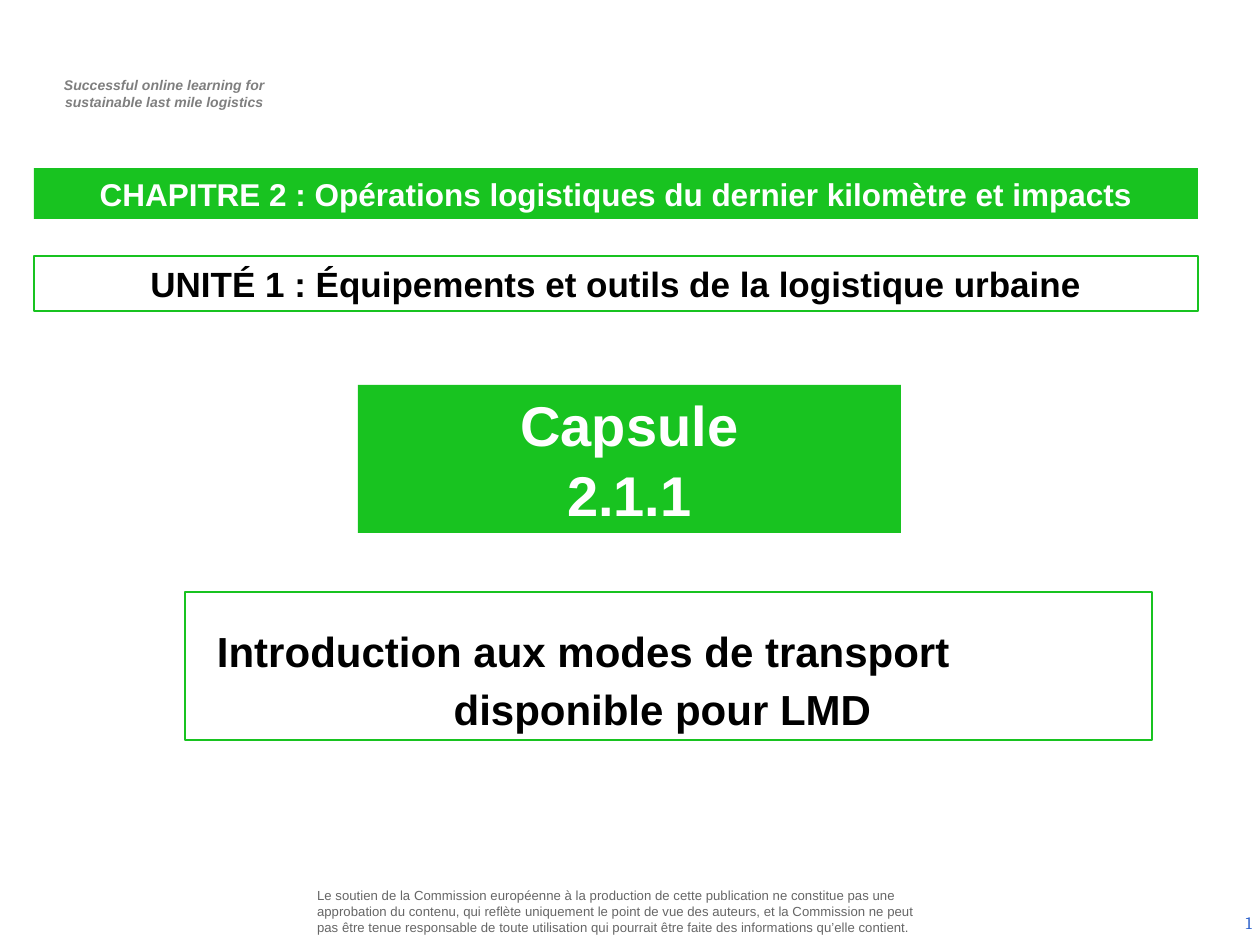
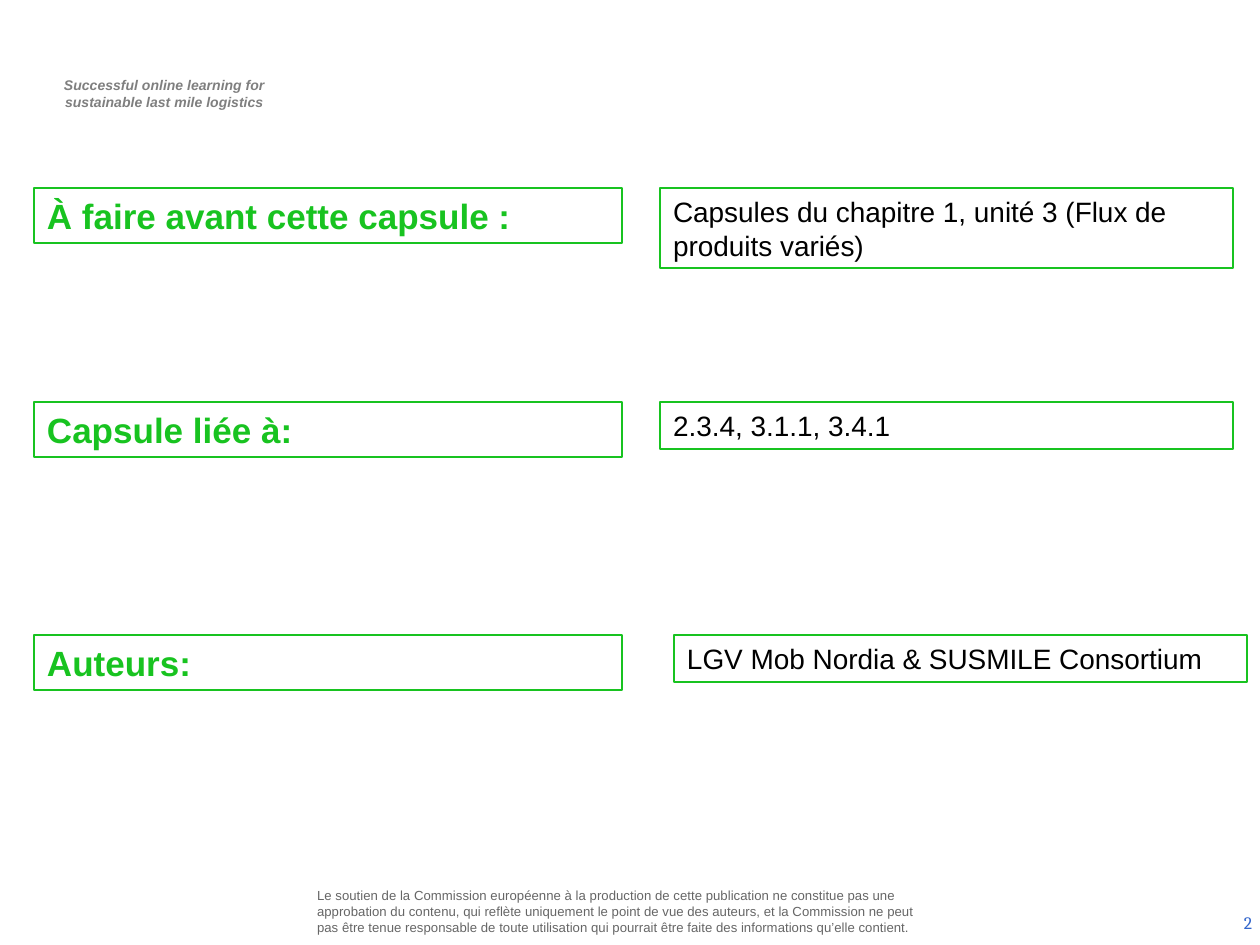
"""Build the opening and prerequisites slides of capsule 2.1.1."""
import dataclasses

import pptx
import pptx.dml.color
import pptx.enum.shapes
import pptx.enum.text
import pptx.oxml.ns
import pptx.util

PX = 914400 / 126
ALIGN = pptx.enum.text.PP_ALIGN
ANCHOR = pptx.enum.text.MSO_ANCHOR


@dataclasses.dataclass(frozen=True)
class Theme:
    green: str = "18C320"
    white: str = "FFFFFF"
    black: str = "000000"
    motto: str = "7F7F7F"
    notice: str = "666666"
    number: str = "3366CC"
    font: str = "Arial"
    number_font: str = "Cambria"
    capsule_size: float = 32
    topic_size: float = 24
    heading_size: float = 20
    chapter_size: float = 18
    answer_size: float = 16
    number_size: float = 10
    motto_size: float = 8
    notice_size: float = 7.5


T = Theme()


def write(sp, text, size, color=T.black, font=T.font, bold=False, italic=False,
          align=ALIGN.LEFT, anchor=ANCHOR.MIDDLE, inset=(13, 6, 13, 6), gap=0):
    """Fill a shape with one paragraph per line of text."""
    tf = sp.text_frame
    tf.word_wrap = True
    tf.auto_size = pptx.enum.text.MSO_AUTO_SIZE.NONE
    tf.vertical_anchor = anchor
    tf.margin_left, tf.margin_top, tf.margin_right, tf.margin_bottom = [round(v * PX) for v in inset]
    for i, line in enumerate(text.split("\n")):
        p = tf.add_paragraph() if i else tf.paragraphs[0]
        p.alignment = align
        p.line_spacing = 1.0
        p.space_before = round(gap * PX) if i else 0
        r = p.add_run()
        r.text = line
        r.font.name = font
        r.font.size = pptx.util.Pt(size)
        r.font.bold = bold
        r.font.italic = italic
        r.font.color.rgb = pptx.dml.color.RGBColor.from_string(color)
    return tf


def box(s, at, fill=None, line=None, width=0.75, title=False):
    """Place a rectangle, or the slide title, with the given fill and line."""
    left, top, w, h = [round(v * PX) for v in at]
    if title:
        sp = s.shapes.title
        sp.left, sp.top, sp.width, sp.height = left, top, w, h
    else:
        sp = s.shapes.add_shape(pptx.enum.shapes.MSO_SHAPE.RECTANGLE, left, top, w, h)
        sp.shadow.inherit = False
    if fill:
        sp.fill.solid()
        sp.fill.fore_color.rgb = pptx.dml.color.RGBColor.from_string(fill)
    else:
        sp.fill.background()
    if line:
        sp.line.color.rgb = pptx.dml.color.RGBColor.from_string(line)
        sp.line.width = pptx.util.Pt(width)
    else:
        sp.line.fill.background()
    return sp


prs = pptx.Presentation()
prs.slide_width = round(1260 * PX)
prs.slide_height = round(945 * PX)
title_only = prs.slide_layouts[5]

motto = "Successful online learning for\nsustainable last mile logistics"
notice = (
    "Le soutien de la Commission européenne à la production de cette publication ne constitue pas une "
    "approbation du contenu, qui reflète uniquement le point de vue des auteurs, et la Commission ne peut "
    "pas être tenue responsable de toute utilisation qui pourrait être faite des informations qu’elle contient."
)

for number in (1, 2):
    s = prs.slides.add_slide(title_only)
    frames = [(37, 71, 255, 47), (312, 886, 621, 50), (971, 898, 294, 50)]
    header, footer, counter = [s.shapes.add_textbox(*[round(v * PX) for v in at]) for at in frames]
    write(header, motto, T.motto_size, T.motto, bold=True, italic=True,
          align=ALIGN.CENTER, anchor=ANCHOR.TOP)
    write(footer, notice, T.notice_size, T.notice, inset=(5, 5, 5, 5))
    tf = write(counter, str(number), T.number_size, T.number, T.number_font, align=ALIGN.RIGHT)
    field = tf.paragraphs[0].runs[0]._r
    field.tag = pptx.oxml.ns.qn("a:fld")
    field.set("id", "{B6F15528-21DE-4FAA-801E-634DDDAF4B2B}")
    field.set("type", "slidenum")

s = prs.slides[0]
sp = box(s, (34, 168, 1164, 51), fill=T.green, title=True)
write(sp, "CHAPITRE 2 : Opérations logistiques du dernier kilomètre et impacts",
      T.chapter_size, T.white, bold=True, align=ALIGN.CENTER)
sp = box(s, (34, 256, 1164, 55), line=T.green)
write(sp, "UNITÉ 1 : Équipements et outils de la logistique urbaine",
      T.heading_size, bold=True, align=ALIGN.CENTER)
sp = box(s, (358, 385, 543, 148), fill=T.green)
write(sp, "Capsule\n2.1.1", T.capsule_size, T.white, bold=True, align=ALIGN.CENTER, gap=3)
sp = box(s, (185, 592, 967, 148), line=T.green, width=1.5)
tf = write(sp, "Introduction aux modes de transport\ndisponible pour LMD", T.topic_size, bold=True,
           align=ALIGN.CENTER, anchor=ANCHOR.BOTTOM, inset=(13, 6, 25, 6), gap=8)
p = tf.paragraphs[0]
p.alignment = ALIGN.LEFT
p._p.get_or_add_pPr().set("marL", str(round(19 * PX)))

s = prs.slides[1]
rows = [
    (188, "À faire avant cette capsule :", "Capsules du chapitre 1, unité 3 (Flux de produits variés)", 660, 80),
    (402, "Capsule liée à:", "2.3.4, 3.1.1, 3.4.1", 660, 47),
    (635, "Auteurs:", "LGV Mob Nordia & SUSMILE Consortium", 674, 47),
]
for i, (top, heading, answer, left, height) in enumerate(rows):
    sp = box(s, (34, top, 588, 55), fill=T.white, line=T.green, title=i == 0)
    write(sp, heading, T.heading_size, T.green, bold=True)
    sp = box(s, (left, top, 573, height), fill=T.white, line=T.green)
    write(sp, answer, T.answer_size)

prs.save("out.pptx")
